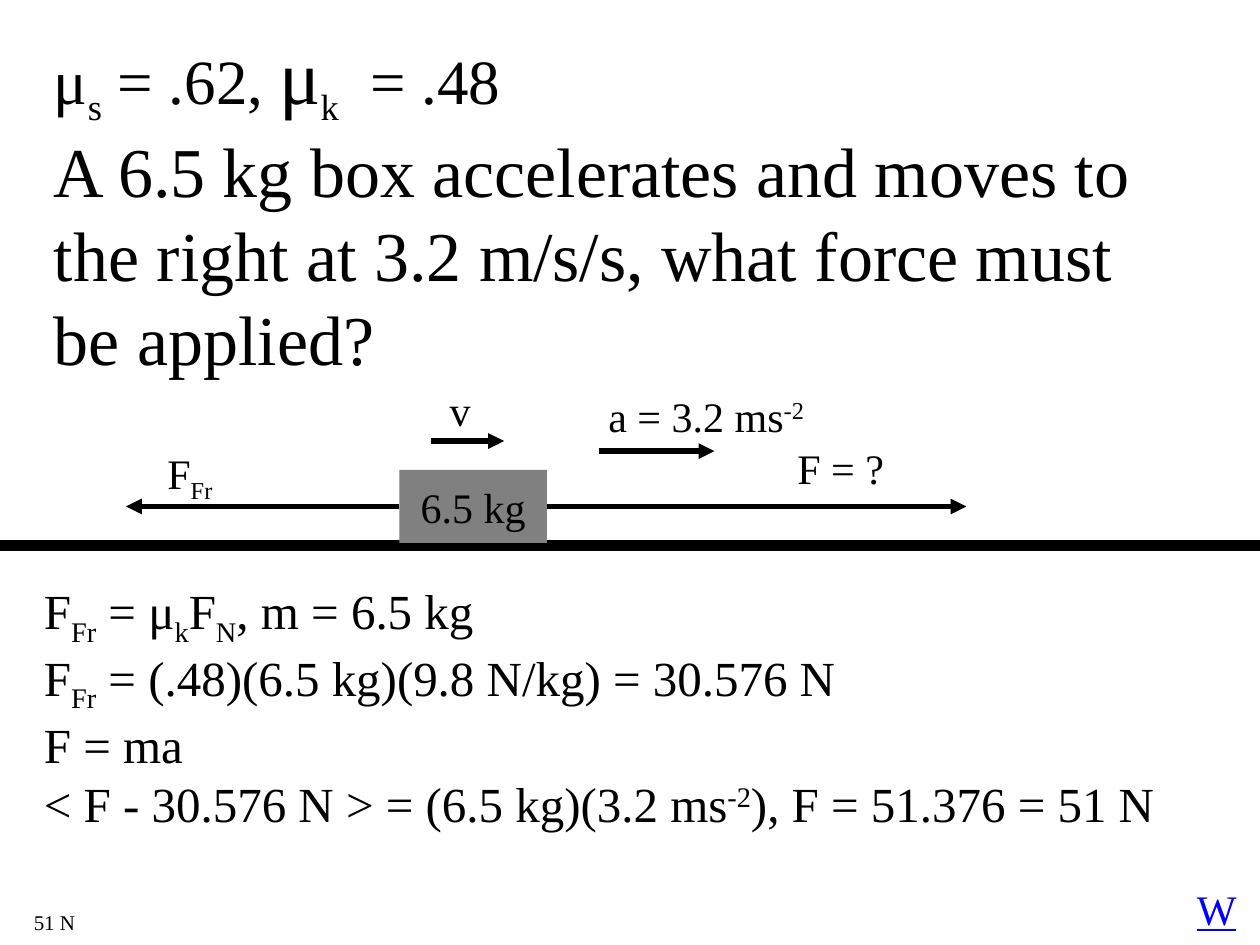
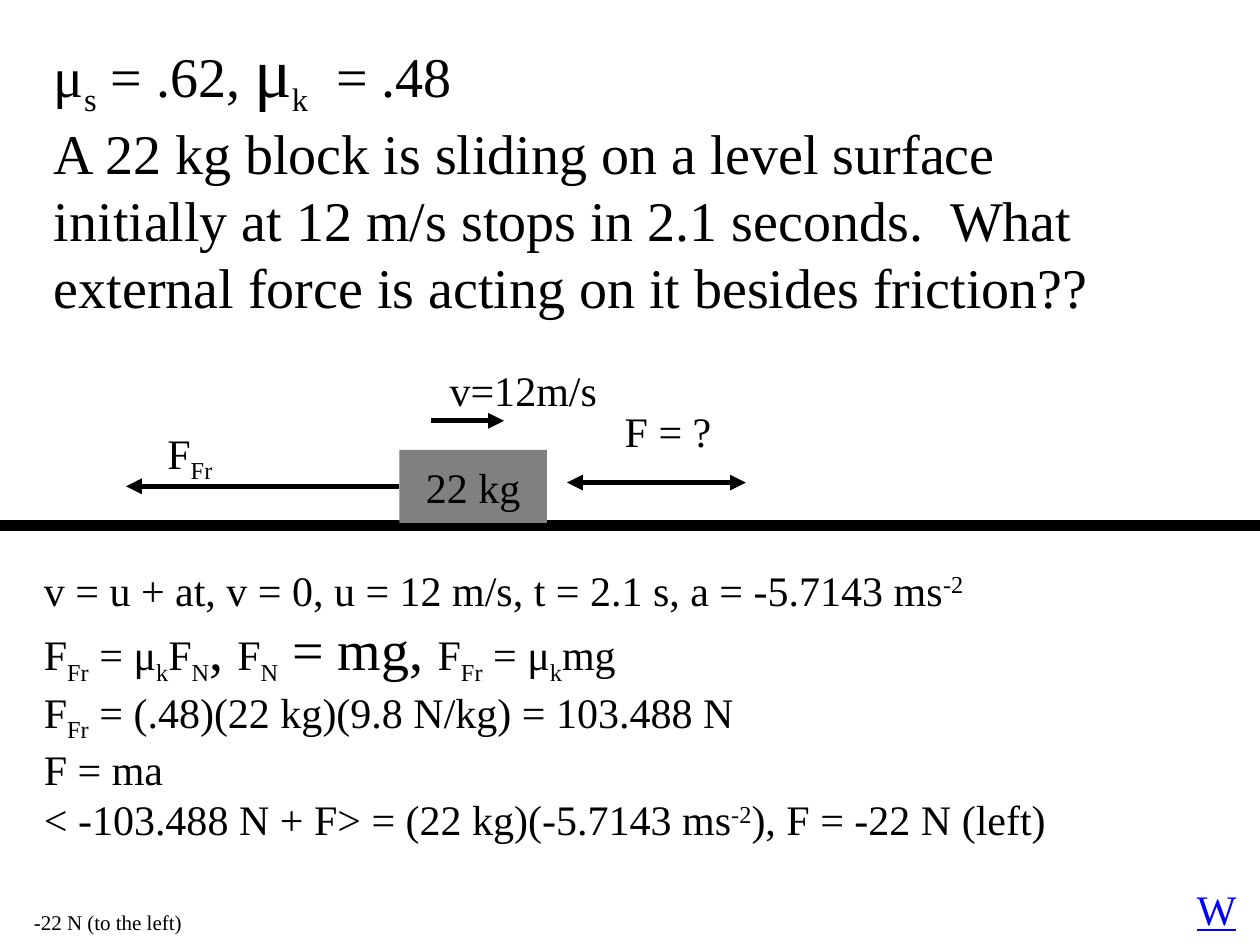
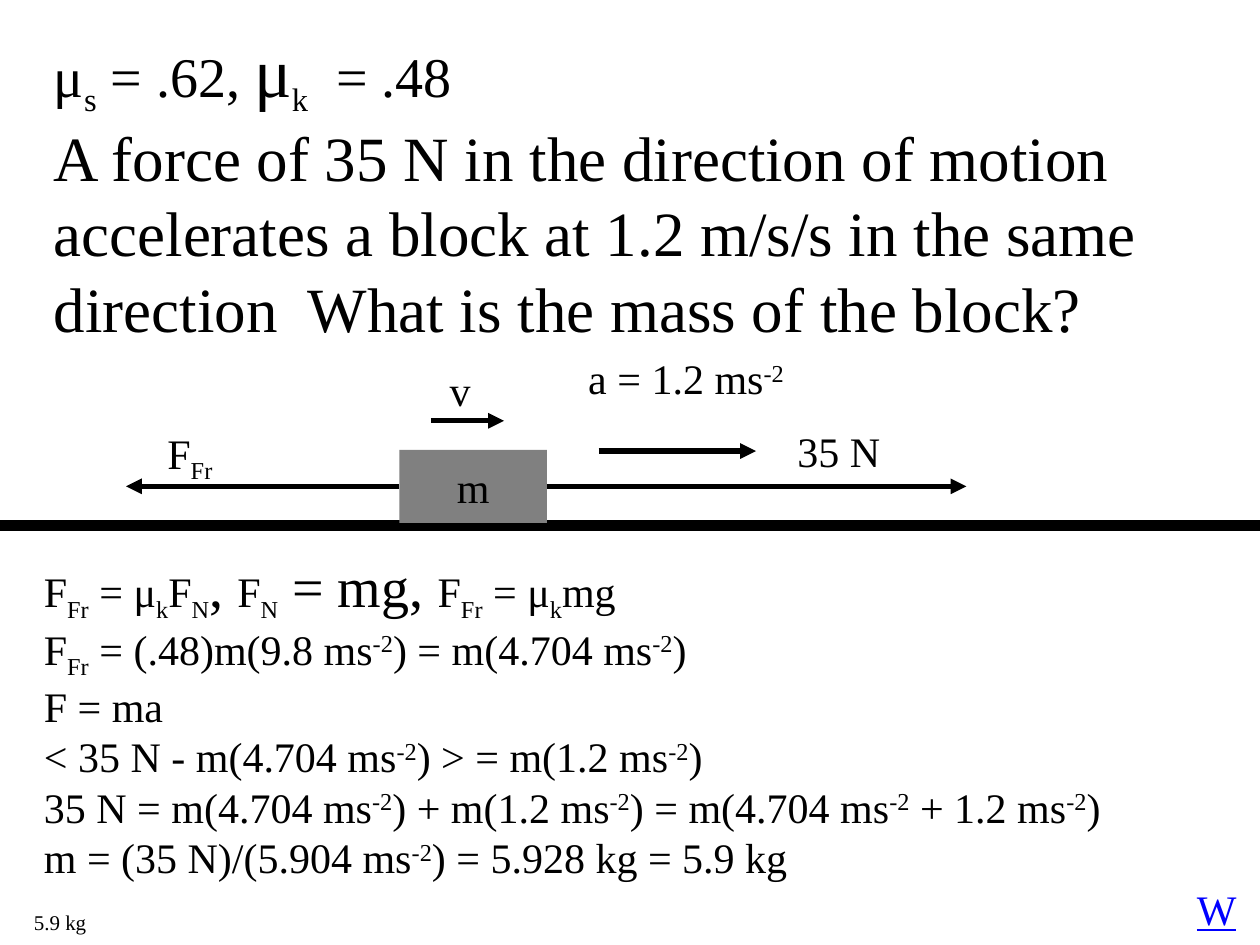
"""Build three friction problems, each with a force diagram and a worked solution."""
from dataclasses import dataclass

from lxml.etree import SubElement
from pptx import Presentation
from pptx.dml.color import RGBColor
from pptx.enum.shapes import MSO_CONNECTOR, MSO_SHAPE
from pptx.enum.text import MSO_ANCHOR, MSO_AUTO_SIZE, PP_ALIGN
from pptx.oxml.ns import qn
from pptx.util import Inches, Pt

COLORS = {"ink": "000000", "block": "808080", "link": "0000FF"}
FONT = "Times New Roman"
LABEL_SIZE = 24
LABEL_HEIGHT = 0.5
BLOCK_LEFT, BLOCK_WIDTH, BLOCK_HEIGHT = 3.17, 1.17, 0.58
FRICTION_END, PULL_END = 1, 7.67
LEFT_SIDE, RIGHT_SIDE = 1, 3


@dataclass(frozen=True)
class Span:
    text: str
    baseline: int = 0
    size: int | None = None


@dataclass(frozen=True)
class Label:
    left: float
    top: float
    width: float
    spans: list[Span]


@dataclass(frozen=True)
class Arrow:
    start: float
    end: float
    top: float
    double: bool = False


@dataclass(frozen=True)
class Problem:
    question: str
    given_size: int
    question_size: int
    question_height: float
    solution: list[list[Span]]
    solution_size: int
    solution_top: float
    solution_height: float
    answer: str
    answer_width: float
    ground: float
    mass: str
    velocity: str
    velocity_width: float
    pulled: bool
    labels: list[Label]
    arrows: list[Arrow]


def sub(text: str) -> Span:
    return Span(text, -25)


PER_SECOND_SQUARED = Span("-2", 30)
FRICTION = [Span("F"), sub("Fr")]
NORMAL = [Span("F"), sub("N")]
FRICTION_LAW = [*FRICTION, Span(" = μ"), sub("k"), *NORMAL]
FRICTION_BY_MASS = [
    *FRICTION_LAW, Span(", ", size=32), *NORMAL, Span(" = mg, ", size=32),
    *FRICTION, Span(" = μ"), sub("k"), Span("mg"),
]
NEWTON = [Span("F = ma")]


def with_units(*texts: str) -> list[Span]:
    """Join texts with a raised -2 between each pair."""
    spans = [Span(texts[0])]
    for text in texts[1:]:
        spans.append(PER_SECOND_SQUARED)
        if text:
            spans.append(Span(text))
    return spans


PROBLEMS = [
    Problem(
        "A 6.5 kg box accelerates and moves to the right at 3.2 m/s/s, what force must be applied?",
        36, 40, 2.86,
        [
            [*FRICTION_LAW, Span(", m = 6.5 kg")],
            [*FRICTION, Span(" = (.48)(6.5 kg)(9.8 N/kg) = 30.576 N")],
            NEWTON,
            with_units("< F - 30.576 N > = (6.5 kg)(3.2 ms", "), F = 51.376 = 51 N"),
        ],
        28, 4.56, 1.99, "51 N", 0.53, 4.33, "6.5 kg", "v", 0.37, True,
        [
            Label(6.23, 3.46, 0.89, [Span("F = ?")]),
            Label(4.73, 3.05, 1.78, with_units("a = 3.2 ms", "")),
        ],
        [Arrow(4.75, 5.67, 3.58)],
    ),
    Problem(
        "A 22 kg block is sliding on a level surface initially at 12 m/s stops in 2.1 seconds.  "
        "What external force is acting on it besides friction??",
        32, 32, 2.39,
        [
            with_units("v = u + at, v = 0, u = 12 m/s, t = 2.1 s, a = -5.7143 ms", ""),
            FRICTION_BY_MASS,
            [*FRICTION, Span(" = (.48)(22 kg)(9.8 N/kg) = 103.488 N")],
            NEWTON,
            with_units("< -103.488 N + F> = (22 kg)(-5.7143 ms", "), F = -22 N (left)"),
        ],
        24, 4.43, 2.26, "-22 N (to the left)", 1.38, 4.17, "22 kg", "v=12m/s", 1.37, False,
        [Label(4.86, 3.17, 0.89, [Span("F = ?")])],
        [Arrow(4.5, 5.92, 3.83, double=True)],
    ),
    Problem(
        "A force of 35 N in the direction of motion accelerates a block at 1.2 m/s/s "
        "in the same direction  What is the mass of the block?",
        32, 36, 2.59,
        [
            FRICTION_BY_MASS,
            [*FRICTION, *with_units(" = (.48)m(9.8 ms", ") = m(4.704 ms", ")")],
            NEWTON,
            with_units("< 35 N - m(4.704 ms", ") > = m(1.2 ms", ")"),
            with_units("35 N = m(4.704 ms", ") + m(1.2 ms", ") = m(4.704 ms", " + 1.2 ms", ")"),
            with_units("m = (35 N)/(5.904 ms", ") = 5.928 kg = 5.9 kg"),
        ],
        24, 4.33, 2.66, "5.9 kg", 0.62, 4.17, "m", "v", 0.37, True,
        [
            Label(6.23, 3.33, 0.86, [Span("35 N")]),
            Label(4.57, 2.75, 1.78, with_units("a = 1.2 ms", "")),
        ],
        [Arrow(4.75, 6, 3.58)],
    ),
]


def color(name: str) -> RGBColor:
    return RGBColor.from_string(COLORS[name])


def add_spans(para, spans: list[Span], size: int, ink: str = "ink", underline: bool = False) -> None:
    for span in spans:
        run = para.add_run()
        run.text = span.text
        run.font.name = FONT
        run.font.size = Pt(span.size or size)
        run.font.color.rgb = color(ink)
        if underline:
            run.font.underline = True
        if span.baseline:
            run._r.get_or_add_rPr().set("baseline", str(span.baseline * 1000))


def add_text(page, left: float, top: float, width: float, height: float,
             lines: list[list[Span]], size: int, wrap: bool = False,
             ink: str = "ink", underline: bool = False) -> None:
    box = page.shapes.add_textbox(Inches(left), Inches(top), Inches(width), Inches(height))
    frame = box.text_frame
    frame.word_wrap = wrap
    frame.auto_size = MSO_AUTO_SIZE.SHAPE_TO_FIT_TEXT
    for number, spans in enumerate(lines):
        para = frame.add_paragraph() if number else frame.paragraphs[0]
        add_spans(para, spans, size, ink, underline)


def add_label(page, label: Label) -> None:
    add_text(page, label.left, label.top, label.width, LABEL_HEIGHT, [label.spans], LABEL_SIZE)


def add_line(page, start: float, end: float, top: float, width: float = 3,
             heads: tuple[str, ...] = ("tailEnd",)):
    line = page.shapes.add_connector(
        MSO_CONNECTOR.STRAIGHT, Inches(start), Inches(top), Inches(end), Inches(top))
    line.line.color.rgb = color("ink")
    line.line.width = Pt(width)
    outline = line.line._get_or_add_ln()
    for head in heads:
        SubElement(outline, qn(f"a:{head}"), type="triangle")
    SubElement(line._element.spPr, qn("a:effectLst"))
    return line


def add_block(page, top: float, mass: str):
    block = page.shapes.add_shape(
        MSO_SHAPE.RECTANGLE, Inches(BLOCK_LEFT), Inches(top), Inches(BLOCK_WIDTH), Inches(BLOCK_HEIGHT))
    block.shadow.inherit = False
    block.fill.solid()
    block.fill.fore_color.rgb = color("block")
    block.line.fill.background()
    frame = block.text_frame
    frame.word_wrap = False
    frame.vertical_anchor = MSO_ANCHOR.MIDDLE
    para = frame.paragraphs[0]
    para.alignment = PP_ALIGN.CENTER
    add_spans(para, [Span(mass)], LABEL_SIZE)
    return block


def add_diagram(page, problem: Problem) -> None:
    ground = problem.ground
    block_top = ground - 0.6
    block_middle = block_top + BLOCK_HEIGHT / 2
    add_line(page, 0, 10, ground, width=6, heads=())
    block = add_block(page, block_top, problem.mass)
    friction = add_line(page, BLOCK_LEFT, FRICTION_END, block_middle)
    friction.begin_connect(block, LEFT_SIDE)
    if problem.pulled:
        pull = add_line(page, BLOCK_LEFT + BLOCK_WIDTH, PULL_END, block_middle)
        pull.begin_connect(block, RIGHT_SIDE)
    add_line(page, 3.42, 4, ground - 0.83)
    add_label(page, Label(3.47, ground - 1.33, problem.velocity_width, [Span(problem.velocity)]))
    add_label(page, Label(1.23, ground - 0.83, 0.59, FRICTION))
    for label in problem.labels:
        add_label(page, label)
    for arrow in problem.arrows:
        heads = ("headEnd", "tailEnd") if arrow.double else ("tailEnd",)
        add_line(page, arrow.start, arrow.end, arrow.top, heads=heads)


def add_problem(deck, problem: Problem) -> None:
    page = deck.slides.add_slide(deck.slide_layouts[6])
    given = [
        Span("μ"), sub("s"), Span(" = .62, "), Span("μ", size=problem.given_size + 8),
        sub("k"), Span("  = .48"),
    ]
    question = [Span(problem.question, size=problem.question_size)]
    add_text(page, 0.33, 0.17, 8.85, problem.question_height, [given, question],
             problem.given_size, wrap=True)
    add_text(page, 0.25, problem.solution_top, 9.5, problem.solution_height,
             problem.solution, problem.solution_size, wrap=True)
    add_text(page, 0.17, 7.17, problem.answer_width, 0.3, [[Span(problem.answer)]], 12)
    add_text(page, 9.4, 6.96, 0.52, LABEL_HEIGHT, [[Span("W")]], LABEL_SIZE,
             ink="link", underline=True)
    add_diagram(page, problem)


def main() -> None:
    deck = Presentation()
    deck.slide_width, deck.slide_height = Inches(10), Inches(7.5)
    for problem in PROBLEMS:
        add_problem(deck, problem)
    deck.save("out.pptx")


if __name__ == "__main__":
    main()
